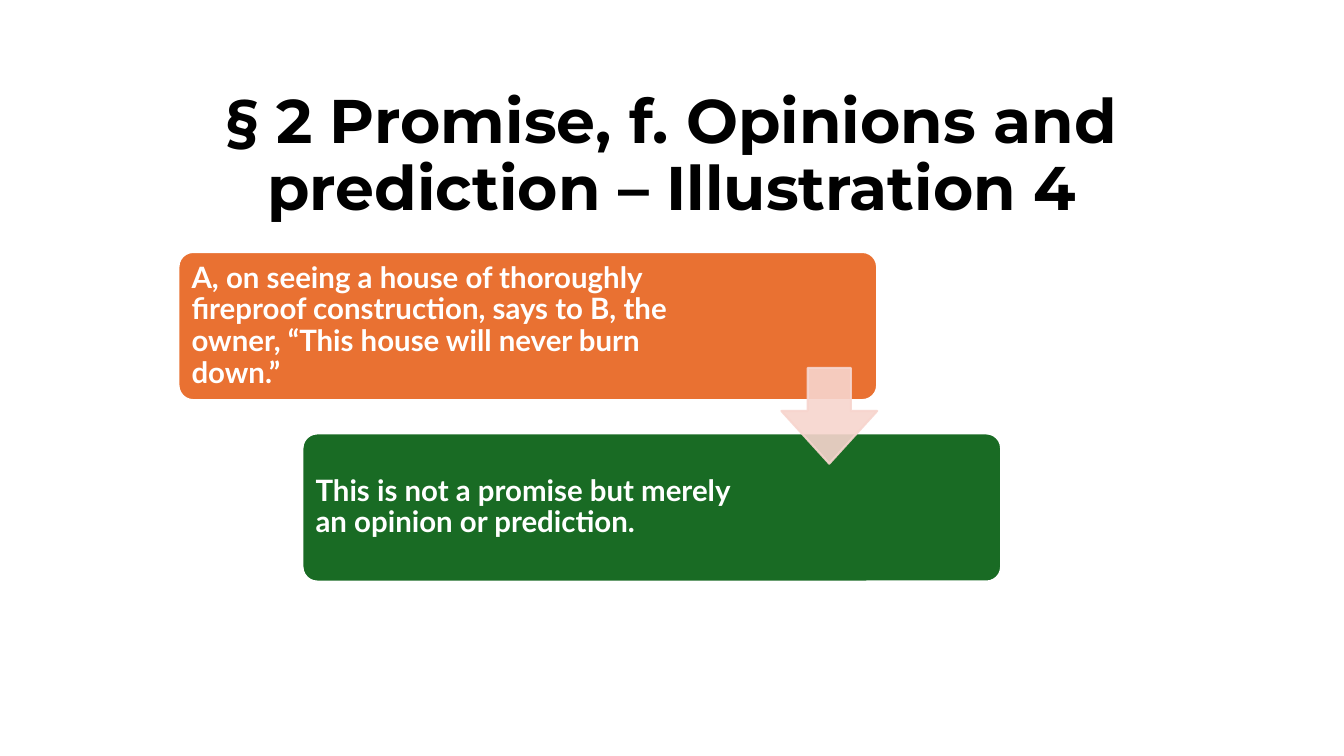
from dataclasses import dataclass

import pptx
import pptx.dml.color
import pptx.enum.shapes
import pptx.enum.text
import pptx.oxml
import pptx.oxml.ns
import pptx.util

EMU_PER_PX = 9144  # 100 px to the inch
SHAPES = pptx.enum.shapes.MSO_SHAPE
ALIGN = pptx.enum.text.PP_ALIGN


@dataclass(frozen=True)
class Theme:
    background: str = "FFFFFF"
    title_color: str = "000000"
    card_text: str = "FFFFFF"
    outline: str = "FFFFFF"
    statement: str = "E97132"
    conclusion: str = "196B24"
    arrow: str = "F7D5CE"
    title_font: str = "Montserrat"
    body_font: str = "Lato"
    title_size: int = 44
    body_size: int = 21
    outline_width: float = 1.5
    line_spacing: float = 0.9


def px(length):
    return pptx.util.Emu(length * EMU_PER_PX)


def rgb(color):
    return pptx.dml.color.RGBColor.from_string(color)


def set_opacity(fill_format, percent):
    """Add an alpha value to a solid fill's colour."""
    color = fill_format._xPr.find(".//" + pptx.oxml.ns.qn("a:srgbClr"))
    color.append(pptx.oxml.parse_xml(
        f'<a:alpha {pptx.oxml.ns.nsdecls("a")} val="{percent * 1000}"/>'))


class SlideBuilder:
    def __init__(self, presentation, theme):
        self.theme = theme
        self.slide = presentation.slides.add_slide(presentation.slide_layouts[6])
        self.slide.background.fill.solid()
        self.slide.background.fill.fore_color.rgb = rgb(theme.background)

    def text(self, content, left, top, width, height, *, font, size, color,
             align=ALIGN.LEFT, inset=(9, 9)):
        """Add bold, vertically centred text; inset is (horizontal, vertical)."""
        box = self.slide.shapes.add_textbox(px(left), px(top), px(width), px(height))
        frame = box.text_frame
        frame.word_wrap = True
        frame.vertical_anchor = pptx.enum.text.MSO_ANCHOR.MIDDLE
        frame.margin_left = frame.margin_right = px(inset[0])
        frame.margin_top = frame.margin_bottom = px(inset[1])
        paragraph = frame.paragraphs[0]
        paragraph.alignment = align
        paragraph.line_spacing = self.theme.line_spacing
        run = paragraph.add_run()
        run.text = content
        run.font.name = font
        run.font.size = pptx.util.Pt(size)
        run.font.bold = True
        run.font.color.rgb = rgb(color)

    def shape(self, kind, left, top, width, height, *, fill, line, adjustments,
              opacity=100):
        shape = self.slide.shapes.add_shape(
            kind, px(left), px(top), px(width), px(height))
        shape.shadow.inherit = False
        for index, value in enumerate(adjustments):
            shape.adjustments[index] = value
        shape.line.width = pptx.util.Pt(self.theme.outline_width)
        for fill_format, color in ((shape.fill, fill), (shape.line.fill, line)):
            fill_format.solid()
            fill_format.fore_color.rgb = rgb(color)
            if opacity < 100:
                set_opacity(fill_format, opacity)

    def title(self, content):
        self.text(content, 130, 75, 1073, 162, font=self.theme.title_font,
                  size=self.theme.title_size, color=self.theme.title_color,
                  align=ALIGN.CENTER, inset=(10, 5))

    def card(self, content, left, top, text_width, fill):
        height, padding = 147, 4
        self.shape(SHAPES.ROUNDED_RECTANGLE, left, top, 693, height, fill=fill,
                   line=self.theme.outline, adjustments=[0.1])
        self.text(content, left + padding, top + padding, text_width,
                  height - 2 * padding, font=self.theme.body_font,
                  size=self.theme.body_size, color=self.theme.card_text)

    def arrow(self, left, top, size):
        self.shape(SHAPES.DOWN_ARROW, left, top, size, size, fill=self.theme.arrow,
                   line=self.theme.arrow, adjustments=[0.45, 0.55], opacity=90)


def main():
    presentation = pptx.Presentation()
    presentation.slide_width = px(1333)
    presentation.slide_height = px(750)
    theme = Theme()
    builder = SlideBuilder(presentation, theme)
    builder.title("§ 2 Promise, f. Opinions and prediction – Illustration 4")
    builder.card("A, on seeing a house of thoroughly fireproof construction, says to B, "
                 "the owner, “This house will never burn down.”",
                 177, 250, 542, theme.statement)
    builder.card("This is not a promise but merely an opinion or prediction.",
                 300, 430, 467, theme.conclusion)
    builder.arrow(775, 365, 95)
    presentation.save("out.pptx")


if __name__ == "__main__":
    main()
